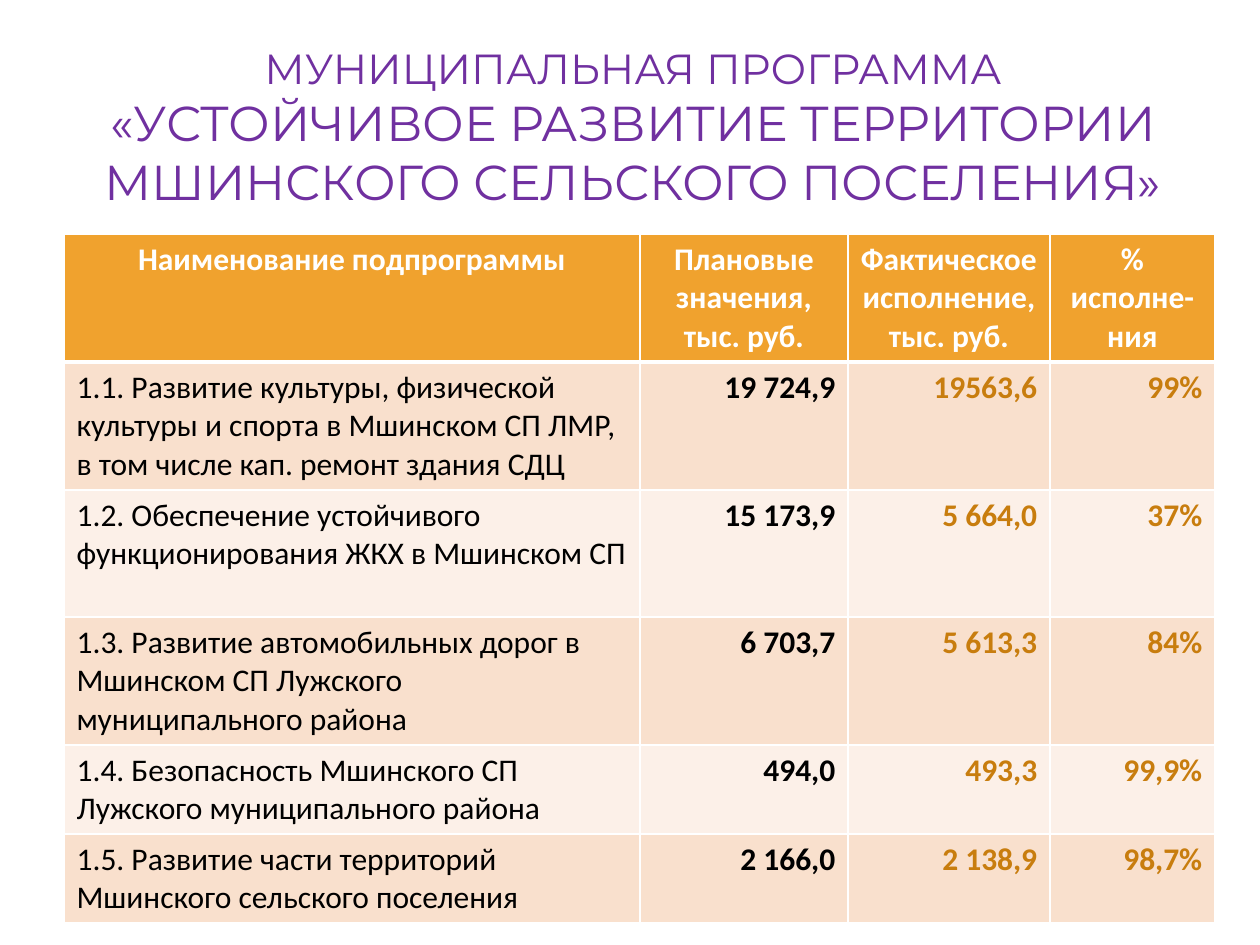
import pptx
import pptx.util
import pptx.dml.color
import pptx.enum.text
import pptx.oxml

Emu = pptx.util.Emu
Pt = pptx.util.Pt
RGBColor = pptx.dml.color.RGBColor
ALIGN = pptx.enum.text.PP_ALIGN

PX = 914400 // 126
WHITE = RGBColor(0xFF, 0xFF, 0xFF)
BLACK = RGBColor(0x00, 0x00, 0x00)
PURPLE = RGBColor(0x70, 0x30, 0xA0)
ORANGE = RGBColor(0xF0, 0xA2, 0x2E)
DARK_ORANGE = RGBColor(0xC8, 0x7D, 0x0E)
PEACH = RGBColor(0xF9, 0xE0, 0xCD)
PALE_PEACH = RGBColor(0xFC, 0xF0, 0xE8)

HEADING = [
    ("МУНИЦИПАЛЬНАЯ ПРОГРАММА", 24),
    ("«УСТОЙЧИВОЕ РАЗВИТИЕ ТЕРРИТОРИИ МШИНСКОГО СЕЛЬСКОГО ПОСЕЛЕНИЯ»", 28),
]
HEADER = [
    "Наименование подпрограммы",
    "Плановые значения, тыс. руб.",
    "Фактическое исполнение, тыс. руб.",
    "% исполне-ния",
]
SUBPROGRAMS = [
    ("1.1. Развитие культуры, физической культуры и спорта в Мшинском СП ЛМР, "
     "в том числе кап. ремонт здания СДЦ", "19 724,9", "19563,6", "99%"),
    ("1.2. Обеспечение устойчивого функционирования ЖКХ в Мшинском СП",
     "15 173,9", "5 664,0", "37%"),
    ("1.3. Развитие автомобильных дорог в Мшинском СП Лужского муниципального района",
     "6 703,7", "5 613,3", "84%"),
    ("1.4. Безопасность Мшинского СП Лужского муниципального района",
     "494,0", "493,3", "99,9%"),
    ("1.5. Развитие части территорий Мшинского сельского поселения",
     "2 166,0", "2 138,9", "98,7%"),
]
COLUMN_WIDTHS = [576, 208, 202, 165]
ROW_HEIGHTS = [128, 128, 127, 128, 89, 89]
COLUMN_STYLES = [
    (ALIGN.LEFT, BLACK, False),
    (ALIGN.RIGHT, BLACK, True),
    (ALIGN.RIGHT, DARK_ORANGE, True),
    (ALIGN.RIGHT, DARK_ORANGE, True),
]


def px(length):
    return Emu(length * PX)


def style_font(font, face, size, color, bold=False):
    font.name = face
    font.size = Pt(size)
    font.color.rgb = color
    font.bold = bold


def add_heading(slide, left, top, width, height):
    frame = slide.shapes.add_textbox(px(left), px(top), px(width), px(height)).text_frame
    frame.word_wrap = True
    heading = frame.paragraphs[0]
    heading.text = "\v".join(line for line, size in HEADING)
    heading.alignment = ALIGN.CENTER
    for run, (line, size) in zip(heading.runs, HEADING):
        style_font(run.font, "Montserrat", size, PURPLE)


def set_borders(cell, top, bottom):
    properties = cell._tc.get_or_add_tcPr()
    sides = [("lnL", 1), ("lnR", 1), ("lnT", top), ("lnB", bottom)]
    for index, (side, points) in enumerate(sides):
        properties.insert(index, pptx.oxml.parse_xml(
            f'<a:{side} xmlns:a="http://schemas.openxmlformats.org/drawingml/2006/main" '
            f'w="{Pt(points)}"><a:solidFill><a:srgbClr val="{WHITE}"/></a:solidFill></a:{side}>'))


def fill_cell(cell, text, fill, alignment, color, bold):
    cell.text = text
    paragraph = cell.text_frame.paragraphs[0]
    paragraph.alignment = alignment
    style_font(paragraph.runs[0].font, "Calibri", 18, color, bold)
    cell.fill.solid()
    cell.fill.fore_color.rgb = fill


def add_budget_table(slide, left, top):
    records = [HEADER] + SUBPROGRAMS
    budget = slide.shapes.add_table(
        len(records), len(HEADER), px(left), px(top),
        px(sum(COLUMN_WIDTHS)), px(sum(ROW_HEIGHTS))).table
    for column, width in zip(budget.columns, COLUMN_WIDTHS):
        column.width = px(width)
    for row, height in zip(budget.rows, ROW_HEIGHTS):
        row.height = px(height)
    for row_index, record in enumerate(records):
        is_header = row_index == 0
        band = PEACH if row_index % 2 else PALE_PEACH
        for column_index, text in enumerate(record):
            cell = budget.cell(row_index, column_index)
            if is_header:
                fill_cell(cell, text, ORANGE, ALIGN.CENTER, WHITE, True)
            else:
                fill_cell(cell, text, band, *COLUMN_STYLES[column_index])
            set_borders(cell, 3 if row_index == 1 else 1, 3 if is_header else 1)


def main():
    deck = pptx.Presentation()
    deck.slide_width = pptx.util.Inches(10)
    deck.slide_height = pptx.util.Inches(7.5)
    slide = deck.slides.add_slide(deck.slide_layouts[6])
    add_heading(slide, 45, 36, 1176, 164)
    add_budget_table(slide, 64, 234)
    deck.save("out.pptx")


if __name__ == "__main__":
    main()
